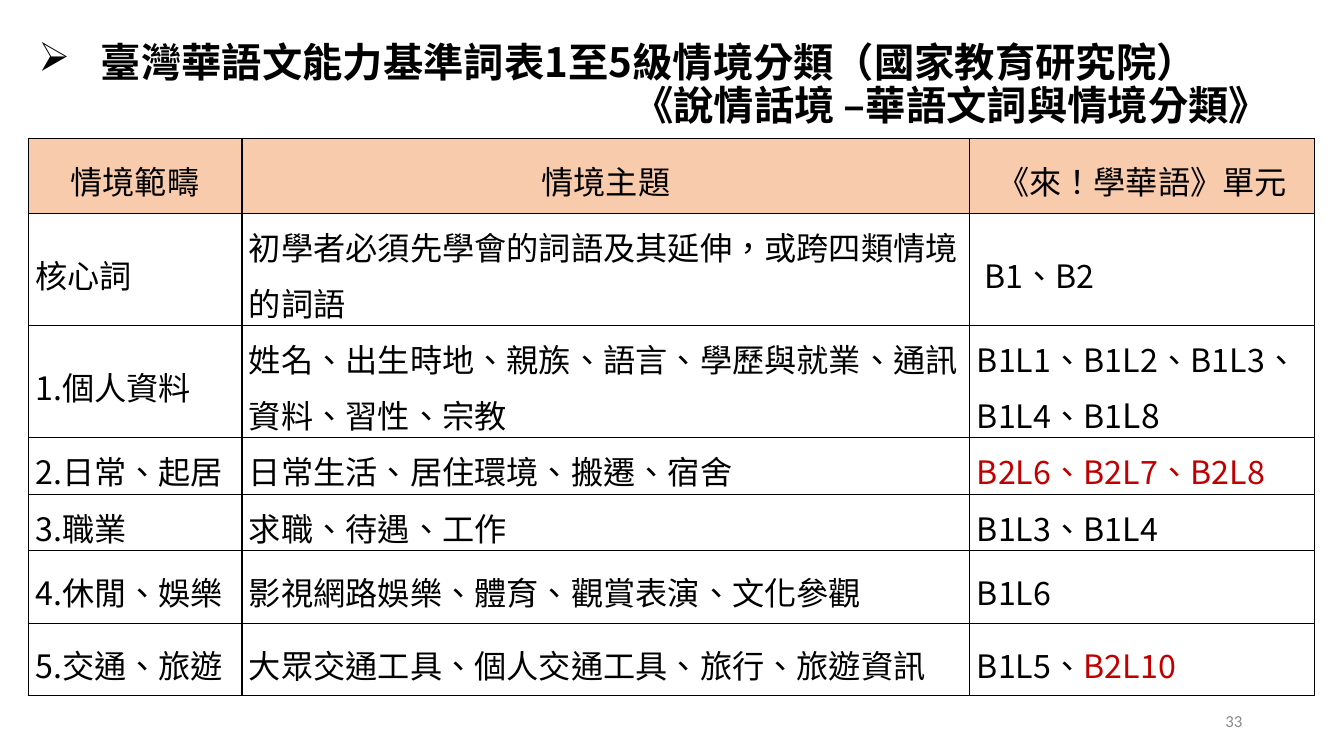
from lxml.etree import SubElement
from pptx import Presentation
from pptx.dml.color import RGBColor
from pptx.enum.text import MSO_ANCHOR, MSO_AUTO_SIZE, PP_ALIGN
from pptx.oxml.ns import qn
from pptx.util import Pt

SCALE = 9144
CJK = "Noto Sans CJK SC"
COLORS = {"ink": "000000", "red": "C00000", "header": "F8CBAD", "number": "898989"}
HEADER = ["情境範疇", "情境主題", "《來！學華語》單元"]
ROWS = [
    ["核心詞", "初學者必須先學會的詞語及其延伸，或跨四類情境的詞語", " B1、B2"],
    ["1.個人資料", "姓名、出生時地、親族、語言、學歷與就業、通訊資料、習性、宗教",
     [("B1L1、B1L2、B1L3、B1L4、B1", {}), ("L8", {"size": 24})]],
    ["2.日常、起居", "日常生活、居住環境、搬遷、宿舍", [("B2L6、B2L7、B2L8", {"color": "red"})]],
    ["3.職業", "求職、待遇、工作", "B1L3、B1L4"],
    ["4.休閒、娛樂", "影視網路娛樂、體育、觀賞表演、文化參觀", "B1L6"],
    ["5.交通、旅遊", "大眾交通工具、個人交通工具、旅行、旅遊資訊",
     [("B1L5、", {}), ("B2L10", {"color": "red"})]],
]
COLS = [212, 722, 342]
HEIGHTS = [75, 111, 111, 56, 56, 72, 72]


def px(n):
    return n * SCALE


def rgb(name):
    return RGBColor.from_string(COLORS[name])


def add_text(p, text, size=23, color="ink", font=CJK, bold=False):
    r = p.add_run()
    r.text = text
    r.font.size = Pt(size)
    r.font.bold = bold
    r.font.name = font
    r.font.color.rgb = rgb(color)
    rPr = r.font._element
    rPr.set("lang", "zh-TW")
    SubElement(rPr, qn("a:ea")).set("typeface", font)


class Deck:
    def __init__(self, width, height):
        self.prs = Presentation()
        self.prs.slide_width, self.prs.slide_height = px(width), px(height)
        self.s = self.prs.slides.add_slide(self.prs.slide_layouts[5])

    def title(self, x, y, w, h, lines):
        sp = self.s.shapes.title
        sp.left, sp.top, sp.width, sp.height = map(px, (x, y, w, h))
        tf = sp.text_frame
        tf.word_wrap = True
        tf.auto_size = MSO_AUTO_SIZE.NONE
        tf.vertical_anchor = MSO_ANCHOR.MIDDLE
        for i, (text, margin, indent, bullet) in enumerate(lines):
            p = tf.add_paragraph() if i else tf.paragraphs[0]
            p.alignment = PP_ALIGN.LEFT
            p.line_spacing = 0.9
            pPr = p._p.get_or_add_pPr()
            pPr.set("marL", str(px(margin)))
            pPr.set("indent", str(px(indent)))
            if bullet:
                SubElement(pPr, qn("a:buChar")).set("char", bullet)
            else:
                SubElement(pPr, qn("a:buNone"))
            add_text(p, text, size=28.8, bold=True)

    def label(self, x, y, w, h, text, **fmt):
        tf = self.s.shapes.add_textbox(*map(px, (x, y, w, h))).text_frame
        tf.word_wrap = True
        tf.vertical_anchor = MSO_ANCHOR.MIDDLE
        tf.paragraphs[0].alignment = PP_ALIGN.RIGHT
        add_text(tf.paragraphs[0], text, **fmt)

    def table(self, x, y, cols, heights, rows):
        shape = self.s.shapes.add_table(
            len(rows), len(cols), *map(px, (x, y, sum(cols), sum(heights))))
        tbl = shape.table
        tbl.first_row = tbl.horz_banding = False
        for col, w in zip(tbl.columns, cols):
            col.width = px(w)
        for i, (row, h) in enumerate(zip(rows, heights)):
            tbl.rows[i].height = px(h)
            for j, content in enumerate(row):
                self.cell(tbl.cell(i, j), content, header=i == 0)

    def cell(self, cell, content, header):
        cell.margin_left = cell.margin_right = px(7)
        cell.margin_top = cell.margin_bottom = 0
        cell.vertical_anchor = MSO_ANCHOR.MIDDLE
        self.borders(cell)
        if header:
            cell.fill.solid()
            cell.fill.fore_color.rgb = rgb("header")
        else:
            cell.fill.background()
        p = cell.text_frame.paragraphs[0]
        p.alignment = PP_ALIGN.CENTER if header else PP_ALIGN.LEFT
        p.line_spacing = Pt(40)
        for text, fmt in [(content, {})] if isinstance(content, str) else content:
            add_text(p, text, **fmt)

    def borders(self, cell):
        tcPr = cell._tc.get_or_add_tcPr()
        for side in ("lnL", "lnR", "lnT", "lnB"):
            ln = SubElement(tcPr, qn(f"a:{side}"), w=str(Pt(1)))
            fill = SubElement(ln, qn("a:solidFill"))
            SubElement(fill, qn("a:srgbClr")).set("val", COLORS["ink"])


def main():
    deck = Deck(1333, 750)
    deck.title(28, 13, 1291, 145, [
        ("臺灣華語文能力基準詞表1至5級情境分類（國家教育研究院）", 62, -62, "➢"),
        ("《說情話境 –華語文詞與情境分類》", 590, 0, None),
    ])
    deck.label(942, 695, 300, 40, "33", size=12, color="number", font="Calibri")
    deck.table(28, 137, COLS, HEIGHTS, [HEADER] + ROWS)
    deck.prs.save("out.pptx")


if __name__ == "__main__":
    main()
